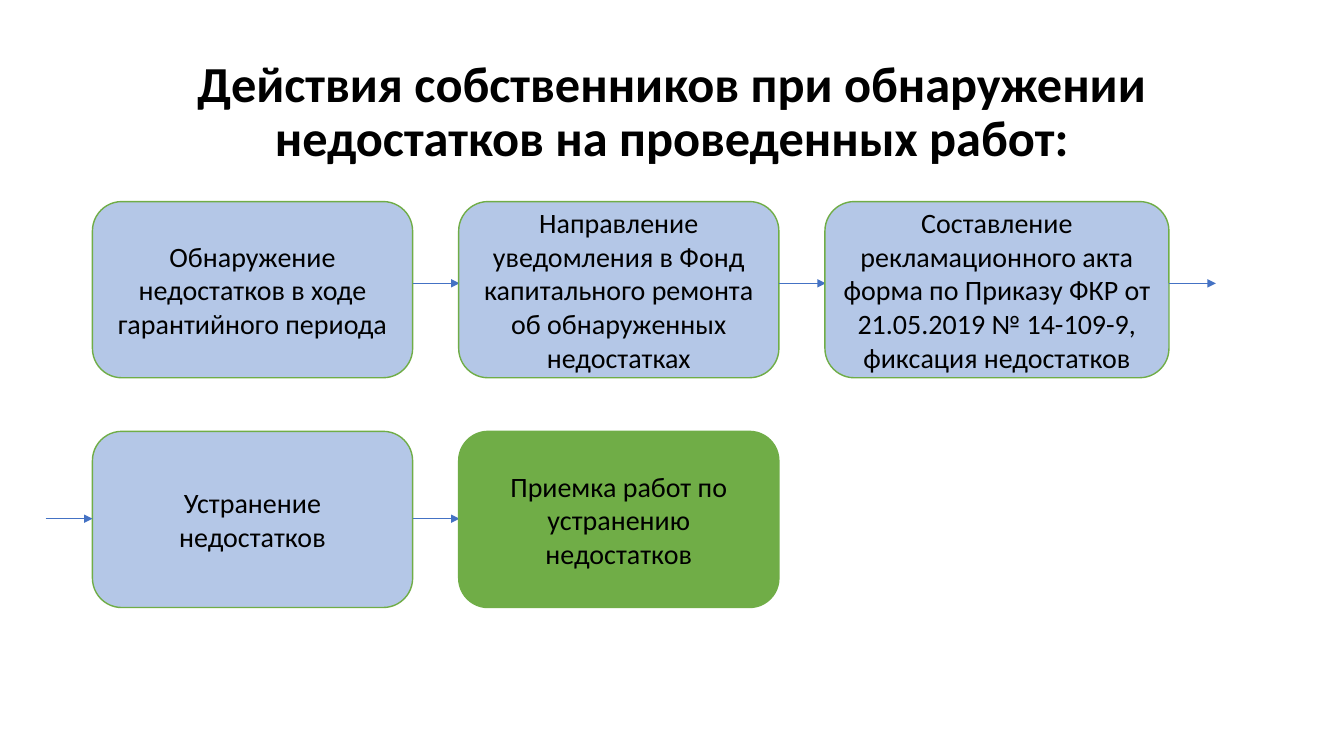
import pptx
import pptx.util
import pptx.dml.color
import pptx.enum.shapes
import pptx.enum.text
import pptx.oxml.ns
import lxml.etree

Cm, Pt = pptx.util.Cm, pptx.util.Pt
RGBColor = pptx.dml.color.RGBColor
MSO_SHAPE = pptx.enum.shapes.MSO_SHAPE
MSO_ANCHOR = pptx.enum.text.MSO_ANCHOR
PP_ALIGN = pptx.enum.text.PP_ALIGN
qn = pptx.oxml.ns.qn

# Content
TITLE = "Действия собственников при обнаружении недостатков на проведенных работ:"
ROWS = [
    ["Обнаружение недостатков в ходе гарантийного периода",
     "Направление уведомления в Фонд капитального ремонта об обнаруженных недостатках",
     "Составление рекламационного акта форма по Приказу ФКР "
     "от 21.05.2019 № 14-109-9, фиксация недостатков"],
    ["Устранение недостатков",
     "Приемка работ по устранению недостатков"],
]

# Style
FONT = "Calibri"
BLACK = RGBColor(0x00, 0x00, 0x00)
LIGHT_BLUE = RGBColor(0xB4, 0xC7, 0xE7)
GREEN = RGBColor(0x70, 0xAD, 0x47)
BLUE = RGBColor(0x44, 0x72, 0xC4)

# Grid, in cm
LEFT, PITCH = 2.33, 9.23
BOX_W, WIDE_BOX_W, BOX_H = 8.07, 8.67, 4.44
ROW_TOPS = [5.08, 10.87]
ARROW_YS = [7.14, 13.07]
ARROW_LEN = 1.18


def format_text(tf, size, bold=False):
    tf.word_wrap = True
    tf.auto_size = pptx.enum.text.MSO_AUTO_SIZE.NONE
    tf.vertical_anchor = MSO_ANCHOR.MIDDLE
    p = tf.paragraphs[0]
    p.alignment = PP_ALIGN.CENTER
    font = p.runs[0].font
    font.name, font.size, font.bold = FONT, Pt(size), bold
    font.color.rgb = BLACK


def add_step(slide, text, left, top, width, fill):
    sp = slide.shapes.add_shape(MSO_SHAPE.ROUNDED_RECTANGLE,
                                Cm(left), Cm(top), Cm(width), Cm(BOX_H))
    sp.shadow.inherit = False
    sp.fill.solid()
    sp.fill.fore_color.rgb = fill
    sp.line.color.rgb = GREEN
    sp.line.width = Pt(1)
    sp.text_frame.text = text
    format_text(sp.text_frame, 20)


def add_arrow(slide, left, y):
    line = slide.shapes.add_connector(pptx.enum.shapes.MSO_CONNECTOR.STRAIGHT,
                                      Cm(left), Cm(y), Cm(left + ARROW_LEN), Cm(y))
    line.line.color.rgb = BLUE
    line.line.width = Pt(0.5)
    spPr = line._element.spPr
    lxml.etree.SubElement(spPr.find(qn("a:ln")), qn("a:tailEnd"), type="triangle")
    lxml.etree.SubElement(spPr, qn("a:effectLst"))


def main():
    prs = pptx.Presentation()
    prs.slide_width, prs.slide_height = Cm(33.87), Cm(19.05)
    slide = prs.slides.add_slide(prs.slide_layouts[5])

    # Title
    title = slide.shapes.title
    title.left, title.top = Cm(LEFT), Cm(1.01)
    title.width, title.height = Cm(29.21), Cm(3.68)
    title.text_frame.text = TITLE
    format_text(title.text_frame, 36, bold=True)
    title.text_frame.paragraphs[0].line_spacing = 0.9

    # Steps, with an arrow after each one except the last
    for steps, top, arrow_y in zip(ROWS, ROW_TOPS, ARROW_YS):
        for col, text in enumerate(steps):
            final = text == ROWS[-1][-1]
            left = LEFT + col * PITCH
            width = WIDE_BOX_W if col == 2 else BOX_W
            add_step(slide, text, left, top, width, GREEN if final else LIGHT_BLUE)
            if not final:
                add_arrow(slide, left + width, arrow_y)

    # Arrow leading into the second row
    add_arrow(slide, LEFT - ARROW_LEN, ARROW_YS[1])

    prs.save("out.pptx")


if __name__ == "__main__":
    main()
